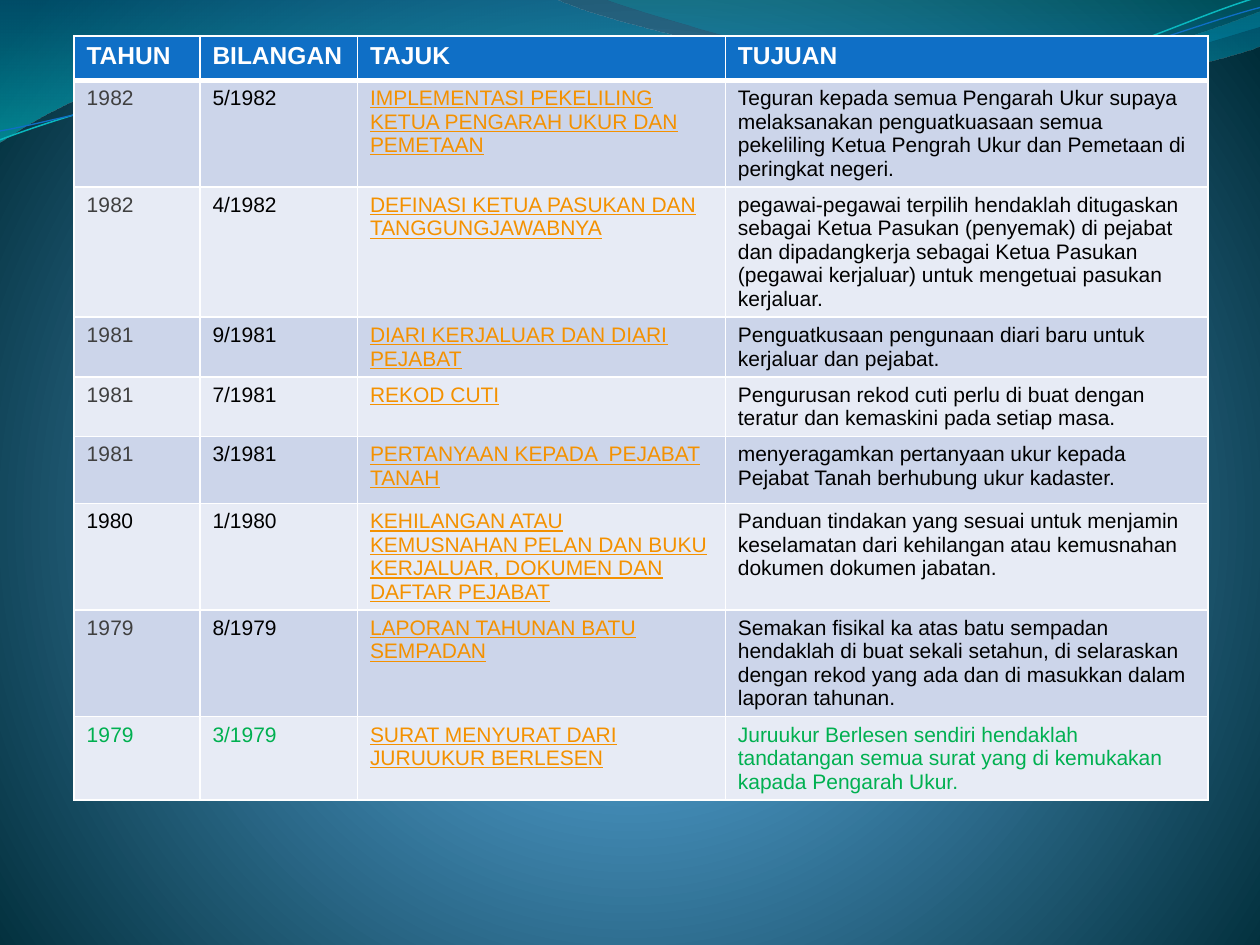
"""Build a slide listing survey circulars from 1979 to 1982 in a table."""
from math import cos, radians, sin

from pptx import Presentation
from pptx.dml.color import RGBColor
from pptx.oxml import parse_xml
from pptx.oxml.ns import nsdecls, qn
from pptx.util import Cm, Pt

WHITE = RGBColor(0xFF, 0xFF, 0xFF)
BLACK = RGBColor(0x00, 0x00, 0x00)
GRAY = RGBColor(0x40, 0x40, 0x40)
GREEN = RGBColor(0x00, 0xB0, 0x50)
ORANGE = RGBColor(0xF4, 0x91, 0x00)
BLUE = RGBColor(0x0F, 0x6F, 0xC6)
TEAL = RGBColor(0x0A, 0xB8, 0xBF)
BANDS = [RGBColor(0xE7, 0xEB, 0xF5), RGBColor(0xCC, 0xD5, 0xEA)]
SKY = RGBColor(0x4A, 0xA0, 0xD6)
STEEL = RGBColor(0x4C, 0x98, 0xC7)
NIGHT = RGBColor(0x00, 0x2C, 0x38)
OCEAN = RGBColor(0x00, 0x74, 0xA1)
AQUA = RGBColor(0x00, 0xC6, 0xCF)
LAGOON = RGBColor(0x00, 0xA1, 0xA9)
AZURE = RGBColor(0x00, 0x8B, 0xBF)
INCH = 2.54
TILT = 2.7
DOWNWARD = '<a:lin %s ang="5400000" scaled="1"/>' % nsdecls("a")
FROM_BELOW = (
    '<a:path %s path="circle"><a:fillToRect l="10000" t="110000" r="10000" b="100000"/></a:path>'
    % nsdecls("a")
)


def paint_gradient(element, stops, direction):
    gradient = next(element.iter(qn("a:gradFill")))
    for child in list(gradient):
        gradient.remove(child)
    marks = "".join(
        f'<a:gs pos="{place * 1000}"><a:srgbClr val="{color}">'
        f'<a:alpha val="{opacity * 1000}"/></a:srgbClr></a:gs>'
        for place, color, opacity in stops
    )
    gradient.append(parse_xml(f'<a:gsLst {nsdecls("a")}>{marks}</a:gsLst>'))
    gradient.append(parse_xml(direction))


def draw_wave(page, start, segments, close):
    lengths = [
        [(Cm(x * INCH), Cm(y * INCH)) for x, y in zip(segment[::2], segment[1::2])]
        for segment in segments
    ]
    builder = page.shapes.build_freeform(Cm(start[0] * INCH), Cm(start[1] * INCH))
    builder.add_line_segments([points[-1] for points in lengths], close=close)
    wave = builder.convert_to_shape()
    wave.shadow.inherit = False
    for line, points in zip(list(wave.element.iter(qn("a:lnTo"))), lengths):
        if len(points) == 3:
            marks = "".join(f'<a:pt x="{x - wave.left}" y="{y - wave.top}"/>' for x, y in points)
            curve = parse_xml(f'<a:cubicBezTo {nsdecls("a")}>{marks}</a:cubicBezTo>')
            line.getparent().replace(line, curve)
    return wave


deck = Presentation()
deck.slide_width, deck.slide_height = Cm(10 * INCH), Cm(7.5 * INCH)
page = deck.slides.add_slide(deck.slide_layouts[6])
page.background.fill.gradient()
paint_gradient(page.element, [(0, SKY, 100), (25, STEEL, 100), (100, NIGHT, 100)], FROM_BELOW)

ribbons = [
    ((0, 0), [(4.4, -0.01), (4.76, 0.17, 6.64, 0.63, 7.58, 0.63),
              (8.53, 0.63, 9.58, 0.26, 10, 0.09), (10.01, 0.36),
              (9.83, 0.44, 8.7, 0.76, 7.46, 0.75), (6.22, 0.75, 3.82, 0.28, 2.57, 0.34),
              (1.29, 0.36, 0.46, 0.83, -0.01, 1.13), (0, 0)],
     [(0, OCEAN, 45), (100, AQUA, 55)]),
    ((4.79, -0.01), [(5.09, 0.11, 6.82, 0.62, 7.69, 0.65),
                     (8.56, 0.69, 9.61, 0.32, 10, 0.21), (10, 0), (4.79, -0.01)],
     [(0, LAGOON, 30), (80, AZURE, 45)]),
]
for start, segments, stops in ribbons:
    ribbon = draw_wave(page, start, segments, True)
    ribbon.line.fill.background()
    ribbon.fill.gradient()
    paint_gradient(ribbon.element, stops, DOWNWARD)

strands = [
    ([(0, 1.11), (0.48, 0.93, 1.58, 0.57, 2.77, 0.52), (3.95, 0.47, 5.93, 0.89, 7.13, 0.8),
      (8.33, 0.71, 9.38, 0.15, 9.98, -0.02)], (4.99, 0.57), TEAL, 0.85),
    ([(0, 1.04), (0.47, 0.96, 1.64, 0.61, 2.83, 0.56), (4.03, 0.51, 5.97, 0.84, 7.17, 0.75),
      (8.36, 0.67, 9.41, 0.21, 10, 0.06)], (5, 0.59), BLUE, 0.75),
]
cosine, sine = cos(radians(TILT)), sin(radians(TILT))
for segments, (middle_x, middle_y), color, width in strands:
    level = []
    for segment in segments:
        turned = []
        for x, y in zip(segment[::2], segment[1::2]):
            dx, dy = x - middle_x, y - middle_y
            turned += [middle_x + dx * cosine - dy * sine, middle_y + dx * sine + dy * cosine]
        level.append(turned)
    strand = draw_wave(page, level[0], level[1:], False)
    strand.rotation = 360 - TILT
    strand.fill.background()
    strand.line.color.rgb = color
    strand.line.width = Pt(width)

records = [
    ("TAHUN", "BILANGAN", "TAJUK", "TUJUAN"),
    ("1982", "5/1982", "IMPLEMENTASI PEKELILING KETUA PENGARAH UKUR DAN PEMETAAN",
     "Teguran kepada semua Pengarah Ukur supaya melaksanakan penguatkuasaan semua "
     "pekeliling Ketua Pengrah Ukur dan Pemetaan di peringkat negeri."),
    ("1982", "4/1982", "DEFINASI KETUA PASUKAN DAN TANGGUNGJAWABNYA",
     "pegawai-pegawai terpilih hendaklah ditugaskan sebagai Ketua Pasukan (penyemak) di "
     "pejabat dan dipadangkerja sebagai Ketua Pasukan (pegawai kerjaluar) untuk mengetuai "
     "pasukan kerjaluar."),
    ("1981", "9/1981", "DIARI KERJALUAR DAN DIARI PEJABAT",
     "Penguatkusaan pengunaan diari baru untuk kerjaluar dan pejabat."),
    ("1981", "7/1981", "REKOD CUTI",
     "Pengurusan rekod cuti perlu di buat dengan teratur dan kemaskini pada setiap masa."),
    ("1981", "3/1981", "PERTANYAAN KEPADA  PEJABAT TANAH",
     "menyeragamkan pertanyaan ukur kepada\nPejabat Tanah berhubung ukur kadaster."),
    ("1980", "1/1980",
     "KEHILANGAN ATAU KEMUSNAHAN PELAN DAN BUKU KERJALUAR, DOKUMEN DAN DAFTAR PEJABAT",
     "Panduan tindakan yang sesuai untuk menjamin keselamatan dari kehilangan atau "
     "kemusnahan dokumen dokumen jabatan."),
    ("1979", "8/1979", "LAPORAN TAHUNAN BATU SEMPADAN",
     "Semakan fisikal ka atas batu sempadan hendaklah di buat sekali setahun, di selaraskan "
     "dengan rekod yang ada dan di masukkan dalam laporan tahunan."),
    ("1979", "3/1979", "SURAT MENYURAT DARI JURUUKUR BERLESEN",
     "Juruukur Berlesen sendiri hendaklah tandatangan semua surat yang di kemukakan kapada "
     "Pengarah Ukur."),
]
column_widths = [1, 1.25, 2.92, 3.83]
row_heights = [0.35, 0.45, 0.75, 0.4, 0.4, 0.53, 0.4, 0.4, 0.4]
frame = page.shapes.add_table(
    len(records), len(column_widths), Cm(1.49), Cm(0.73), Cm(9 * INCH), Cm(6.38 * INCH)
)
table = frame.table
for column, width in zip(table.columns, column_widths):
    column.width = Cm(width * INCH)
for row, height in zip(table.rows, row_heights):
    row.height = Cm(height * INCH)
frame.height = Cm(6.38 * INCH)

for r, record in enumerate(records):
    is_header, is_last = r == 0, r == len(records) - 1
    for c, text in enumerate(record):
        cell = table.cell(r, c)
        cell.fill.solid()
        cell.fill.fore_color.rgb = BLUE if is_header else BANDS[r % 2]
        is_split_year = c == 0 and not is_header and text != "1980"
        if is_header:
            color = WHITE
        elif c == 2:
            color = ORANGE
        elif is_last:
            color = GREEN
        else:
            color = GRAY if is_split_year else BLACK
        for n, line in enumerate(text.split("\n")):
            para = cell.text_frame.add_paragraph() if n else cell.text_frame.paragraphs[0]
            for piece in [line[:2], line[2:]] if is_split_year else [line]:
                span = para.add_run()
                span.text = piece
                span.font.name = "Arial"
                span.font.size = Pt(14 if is_header else 12)
                span.font.bold = is_header
                span.font.underline = c == 2 and not is_header
                span.font.color.rgb = color
            if is_split_year:
                para.runs[0]._r.get_or_add_rPr().set("spc", "10")
        properties = cell._tc.get_or_add_tcPr()
        for place, side in enumerate("LRTB"):
            width = Pt(3 if (r, side) in [(0, "B"), (1, "T")] else 1)
            properties.insert(place, parse_xml(
                f'<a:ln{side} {nsdecls("a")} w="{width}"><a:solidFill>'
                f'<a:srgbClr val="{WHITE}"/></a:solidFill></a:ln{side}>'
            ))

deck.save("out.pptx")
